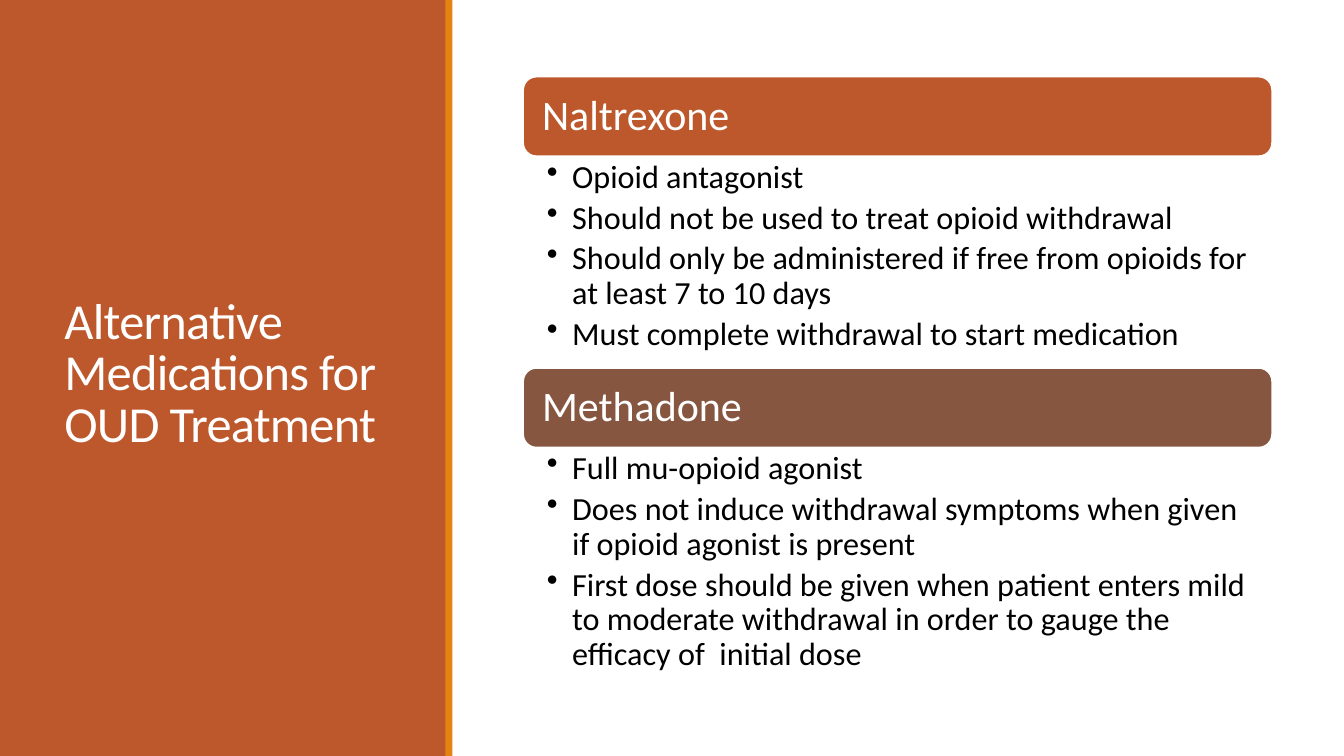
import pptx
import pptx.dml.color
import pptx.enum.shapes
import pptx.enum.text
import pptx.oxml
import pptx.oxml.ns
import pptx.util

Pt = pptx.util.Pt
RGB = pptx.dml.color.RGBColor
SHAPE = pptx.enum.shapes.MSO_SHAPE
ANCHOR = pptx.enum.text.MSO_ANCHOR

RUST = RGB(0xBD, 0x58, 0x2C)
BROWN = RGB(0x86, 0x56, 0x40)
AMBER = RGB(0xE4, 0x83, 0x12)
WHITE = RGB(0xFF, 0xFF, 0xFF)
BLACK = RGB(0x00, 0x00, 0x00)

LEFT, WIDTH, HEAD = 373.7, 535, 56.9
# Each drug: top, height of its list, colour, name, points
DRUGS = [
    (54.7, 151.9, RUST, "Naltrexone", [
        "Opioid antagonist",
        "Should not be used to treat opioid withdrawal",
        "Should only be administered if free from opioids for at least 7 to 10 days",
        "Must complete withdrawal to start medication",
    ]),
    (262.8, 171.4, BROWN, "Methadone", [
        "Full mu-opioid agonist",
        "Does not induce withdrawal symptoms when given if opioid agonist is present",
        "First dose should be given when patient enters mild to moderate withdrawal "
        "in order to gauge the efficacy of  initial dose",
    ]),
]


def add_block(slide, kind, box, fill, line=None):
    block = slide.shapes.add_shape(kind, *map(Pt, box))
    block.shadow.inherit = False
    block.fill.solid()
    block.fill.fore_color.rgb = fill
    if line is None:
        block.line.fill.background()
    else:
        block.line.color.rgb = line
        block.line.width = Pt(1.25)
    return block


def add_box(slide, box):
    return slide.shapes.add_textbox(*map(Pt, box))


def add_bullet(para, indent):
    props = para._p.get_or_add_pPr()
    props.set("marL", str(Pt(indent)))
    props.set("indent", str(-Pt(indent)))
    mark = pptx.oxml.parse_xml(
        '<a:buChar %s char="•"/>' % pptx.oxml.ns.nsdecls("a"))
    props.append(mark)


def write(shape, lines, size, color, inset=(7.2, 3.6), anchor=ANCHOR.TOP,
          pitch=0.9, after=0, track=0, bullet=False):
    """Fill a shape with paragraphs; inset is (sides, top and bottom)."""
    frame = shape.text_frame
    frame.word_wrap = True
    frame.vertical_anchor = anchor
    frame.margin_left = frame.margin_right = Pt(inset[0])
    frame.margin_top = frame.margin_bottom = Pt(inset[1])
    for i, line in enumerate(lines):
        para = frame.add_paragraph() if i else frame.paragraphs[0]
        para.alignment = pptx.enum.text.PP_ALIGN.LEFT
        para.line_spacing = pitch
        para.space_after = Pt(after)
        if bullet:
            add_bullet(para, 18)
        run = para.add_run()
        run.text = line
        run.font.name = "Calibri"
        run.font.size = Pt(size)
        run.font.color.rgb = color
        if track:
            run.font._element.set("spc", str(int(track * 100)))


def add_drug(slide, top, height, fill, name, points):
    head = add_block(slide, SHAPE.ROUNDED_RECTANGLE,
                     (LEFT, top, WIDTH, HEAD), fill, WHITE)
    write(head, [name], 30, WHITE, inset=(10.8, 8.6), anchor=ANCHOR.MIDDLE)
    body = add_box(slide, (LEFT, top + HEAD, WIDTH, height))
    write(body, points, 23, BLACK, inset=(17, 2.9), after=4.4, bullet=True)


def main():
    deck = pptx.Presentation()
    deck.slide_width, deck.slide_height = Pt(960), Pt(540)
    slide = deck.slides.add_slide(deck.slide_layouts[6])

    add_block(slide, SHAPE.RECTANGLE, (0, 0, 319, 540), RUST)
    add_block(slide, SHAPE.RECTANGLE, (318.2, 0, 5, 540), AMBER)
    title = add_box(slide, (38.9, 41, 242.6, 454.3))
    write(title, ["Alternative Medications for OUD Treatment"], 36, WHITE,
          anchor=ANCHOR.MIDDLE, pitch=0.85, track=-0.5)
    for drug in DRUGS:
        add_drug(slide, *drug)
    deck.save("out.pptx")


if __name__ == "__main__":
    main()
